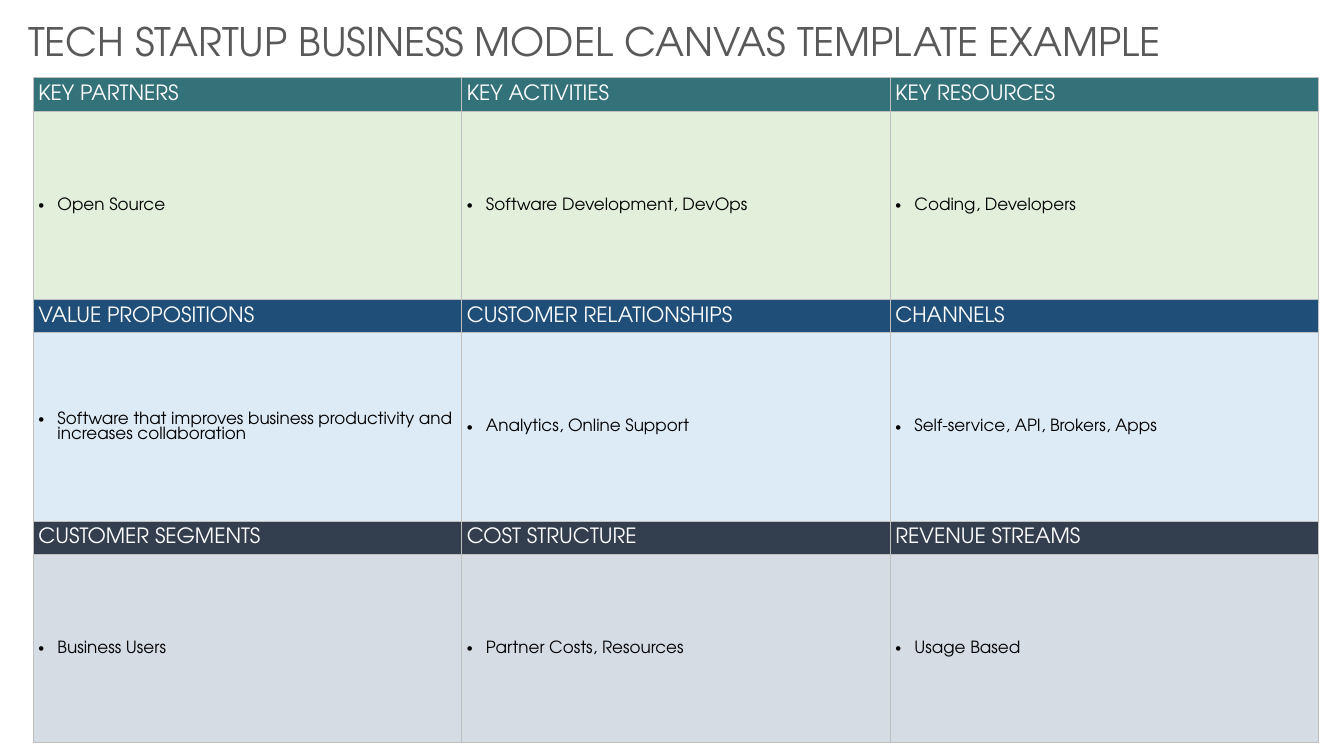
from lxml import etree
from pptx import Presentation
from pptx.dml.color import RGBColor
from pptx.enum.text import MSO_ANCHOR, MSO_AUTO_SIZE, PP_ALIGN
from pptx.oxml.ns import qn
from pptx.util import Inches, Pt

TOP, MIDDLE = MSO_ANCHOR.TOP, MSO_ANCHOR.MIDDLE
GROW = MSO_AUTO_SIZE.SHAPE_TO_FIT_TEXT
LEFT = PP_ALIGN.LEFT

COLORS = {
    "title": "595959", "white": "FFFFFF", "black": "000000", "edge": "BFBFBF",
    "teal": "34727A", "green": "E2EFDA",
    "navy": "1F4E78", "sky": "DDEBF7",
    "slate": "333F4F", "gray": "D6DCE4",
}

BANDS = [
    ("teal", "green", [
        ("KEY PARTNERS", "Open Source"),
        ("KEY ACTIVITIES", "Software Development, DevOps"),
        ("KEY RESOURCES", "Coding, Developers"),
    ]),
    ("navy", "sky", [
        ("VALUE PROPOSITIONS",
         "Software that improves business productivity and increases collaboration"),
        ("CUSTOMER RELATIONSHIPS", "Analytics, Online Support"),
        ("CHANNELS", "Self-service, API, Brokers, Apps"),
    ]),
    ("slate", "gray", [
        ("CUSTOMER SEGMENTS", "Business Users"),
        ("COST STRUCTURE", "Partner Costs, Resources"),
        ("REVENUE STREAMS", "Usage Based"),
    ]),
]


def write(frame, text, font, size, color, bullet=False):
    """Put one formatted paragraph into a text frame."""
    para = frame.paragraphs[0]
    para.alignment = LEFT
    if bullet:
        props = para._p.get_or_add_pPr()
        props.set("marL", str(Inches(0.19)))
        props.set("indent", str(-Inches(0.19)))
        etree.SubElement(props, qn("a:buFont"), typeface="Arial")
        etree.SubElement(props, qn("a:buChar"), char="•")
    run = para.add_run()
    run.text = text
    run.font.name = font
    run.font.size = Pt(size)
    run.font.color.rgb = RGBColor.from_string(COLORS[color])


class Canvas:
    """Hold the style and the current slide."""

    def __init__(self, deck, font):
        """Add a title-only slide to the deck."""
        self.font = font
        self.slide = deck.slides.add_slide(deck.slide_layouts[5])

    def title(self, text, left, top, width, height):
        """Place and fill the title."""
        shape = self.slide.shapes.title
        shape.left, shape.top = Inches(left), Inches(top)
        shape.width, shape.height = Inches(width), Inches(height)
        frame = shape.text_frame
        frame.word_wrap = True
        frame.auto_size = GROW
        frame.vertical_anchor = TOP
        write(frame, text, self.font, 28, "title")

    def edges(self, cell):
        """Draw thin lines on the four sides of a cell."""
        props = cell._tc.get_or_add_tcPr()
        for side in ("lnL", "lnR", "lnT", "lnB"):
            line = etree.SubElement(props, qn(f"a:{side}"), w=str(Pt(0.5)))
            fill = etree.SubElement(line, qn("a:solidFill"))
            etree.SubElement(fill, qn("a:srgbClr"), val=COLORS["edge"])

    def cell(self, cell, text, fill, **style):
        """Fill and format one table cell."""
        self.edges(cell)
        cell.fill.solid()
        cell.fill.fore_color.rgb = RGBColor.from_string(COLORS[fill])
        cell.vertical_anchor = MIDDLE
        cell.margin_left = Inches(0.05)
        cell.margin_right = Inches(0.01)
        cell.margin_top = Inches(0.01)
        cell.margin_bottom = 0
        write(cell.text_frame, text, self.font, **style)

    def table(self, bands, left, top, width, heights):
        """Build the grid, with a head row and a body row for each band."""
        cols = len(bands[0][2])
        table = self.slide.shapes.add_table(
            2 * len(bands), cols, Inches(left), Inches(top),
            Inches(width * cols), Inches(sum(heights) * len(bands))).table
        table.first_row = table.horz_banding = False
        for col in table.columns:
            col.width = Inches(width)
        for num, row in enumerate(table.rows):
            row.height = Inches(heights[num % 2])
        for num, (dark, light, items) in enumerate(bands):
            for col, (head, body) in enumerate(items):
                self.cell(table.cell(2 * num, col), head, dark,
                          size=15, color="white")
                self.cell(table.cell(2 * num + 1, col), body, light,
                          size=12, color="black", bullet=True)


def main():
    """Build and save the slide."""
    deck = Presentation()
    deck.slide_width, deck.slide_height = Inches(13.33), Inches(7.5)
    canvas = Canvas(deck, "TeX Gyre Adventor")
    canvas.title("TECH STARTUP BUSINESS MODEL CANVAS TEMPLATE EXAMPLE",
                 0.18, 0.12, 12.9, 0.57)
    canvas.table(BANDS, 0.33, 0.77, 4.25, (0.33, 1.87))
    deck.save("out.pptx")


if __name__ == "__main__":
    main()
